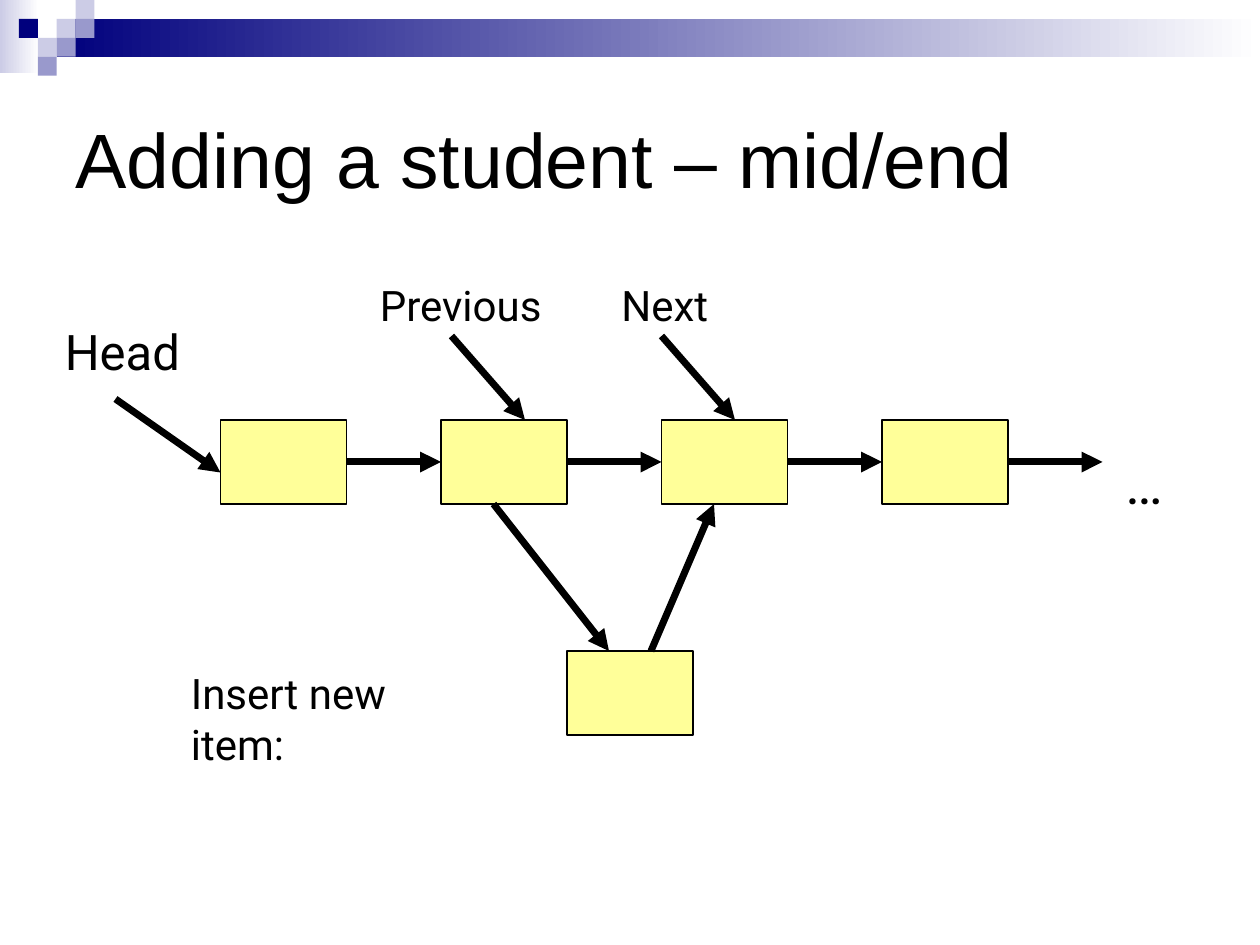
from typing import NamedTuple

from lxml.etree import SubElement
from pptx import Presentation
from pptx.dml.color import RGBColor
from pptx.enum.shapes import MSO_CONNECTOR, MSO_SHAPE
from pptx.enum.text import MSO_ANCHOR
from pptx.oxml.ns import qn
from pptx.util import Pt

BLACK, WHITE, NAVY = "000000", "FFFFFF", "00007D"
LAVENDER, VIOLET, YELLOW = "CCCCE6", "9999CC", "FFFF99"
CELL = 10.8
NODE_W, NODE_H, NODE_TOP, NODE_STEP = 72, 48, 240, 126
RIGHT, LEFT = 3, 1


class Box(NamedTuple):
    left: float
    top: float
    width: float
    height: float


class Label(NamedTuple):
    text: str
    box: Box
    size: int
    font: str = "Roboto"
    anchor: MSO_ANCHOR = MSO_ANCHOR.TOP


class Arrow(NamedTuple):
    x1: float
    y1: float
    x2: float
    y2: float


LABELS = [
    Label("Adding a student – mid/end", Box(36, 36, 648, 108), 44, "Arial", MSO_ANCHOR.MIDDLE),
    Label("…", Box(636, 253, 84, 45), 32),
    Label("Head", Box(30, 180, 108, 41), 28),
    Label("Insert new item:", Box(102, 378, 156, 65), 24),
    Label("Previous", Box(210, 156, 108, 36), 24),
    Label("Next", Box(348, 156, 72, 36), 24),
]
POINTER_ARROWS = [
    Arrow(66, 228, 126, 270),   # head to first node
    Arrow(258, 192, 300, 240),  # previous
    Arrow(378, 192, 420, 240),  # next
    Arrow(282, 288, 348, 372),  # previous node to new item
    Arrow(372, 372, 408, 288),  # new item to next node
]
# column, row, colour on the corner grid
CHECKERS = [
    (3, 1, LAVENDER), (4, 0, LAVENDER), (4, 1, VIOLET), (2, 2, LAVENDER),
    (1, 1, NAVY), (3, 2, VIOLET), (2, 3, VIOLET),
]


def rgb(value: str) -> RGBColor:
    return RGBColor.from_string(value)


def add_rect(s, box: Box):
    sp = s.shapes.add_shape(MSO_SHAPE.RECTANGLE, *map(Pt, box))
    sp.shadow.inherit = False
    sp.line.fill.background()
    return sp


def add_solid(s, box: Box, colour: str):
    sp = add_rect(s, box)
    sp.fill.solid()
    sp.fill.fore_color.rgb = rgb(colour)
    return sp


def add_fade(s, box: Box, colour: str) -> None:
    """Draw a band fading from the colour on the left to white."""
    fill = add_rect(s, box).fill
    fill.gradient()
    fill.gradient_angle = 0
    for stop, value, position in zip(fill.gradient_stops, (colour, WHITE), (0, 1)):
        stop.color.rgb = rgb(value)
        stop.position = position


def add_node(s, left: float, top: float):
    sp = add_solid(s, Box(left, top, NODE_W, NODE_H), YELLOW)
    sp.line.color.rgb = rgb(BLACK)
    sp.line.width = Pt(0.75)
    return sp


def add_arrow(s, arrow: Arrow):
    cxn = s.shapes.add_connector(MSO_CONNECTOR.STRAIGHT, *map(Pt, arrow))
    cxn.line.color.rgb = rgb(BLACK)
    cxn.line.width = Pt(4)
    SubElement(cxn.line._get_or_add_ln(), qn("a:tailEnd"), type="triangle")
    SubElement(cxn._element.spPr, qn("a:effectLst"))
    return cxn


def add_label(s, label: Label) -> None:
    tf = s.shapes.add_textbox(*map(Pt, label.box)).text_frame
    for name, value in {"word_wrap": True, "vertical_anchor": label.anchor}.items():
        setattr(tf, name, value)
    r = tf.paragraphs[0].add_run()
    r.text = label.text
    for name, value in {"name": label.font, "size": Pt(label.size)}.items():
        setattr(r.font, name, value)
    r.font.color.rgb = rgb(BLACK)


def add_banner(s) -> None:
    add_fade(s, Box(0, 0, 22.3, 41.8), LAVENDER)
    add_fade(s, Box(3 * CELL, CELL, 720 - 3 * CELL, 2 * CELL), NAVY)
    for column, row, colour in CHECKERS:
        add_solid(s, Box(column * CELL, row * CELL, CELL, CELL), colour)


def add_linked_list(s) -> None:
    nodes = [add_node(s, 126 + i * NODE_STEP, NODE_TOP) for i in range(4)]
    middle = NODE_TOP + NODE_H / 2
    for i, node in enumerate(nodes):
        start = 126 + i * NODE_STEP + NODE_W
        cxn = add_arrow(s, Arrow(start, middle, start + NODE_STEP - NODE_W, middle))
        cxn.begin_connect(node, RIGHT)
        if i + 1 < len(nodes):
            cxn.end_connect(nodes[i + 1], LEFT)
    add_node(s, 324, 372)


def main() -> None:
    prs = Presentation()
    prs.slide_width, prs.slide_height = Pt(720), Pt(540)
    s = prs.slides.add_slide(prs.slide_layouts[6])
    add_banner(s)
    add_linked_list(s)
    for arrow in POINTER_ARROWS:
        add_arrow(s, arrow)
    for label in LABELS:
        add_label(s, label)
    prs.save("out.pptx")


if __name__ == "__main__":
    main()
